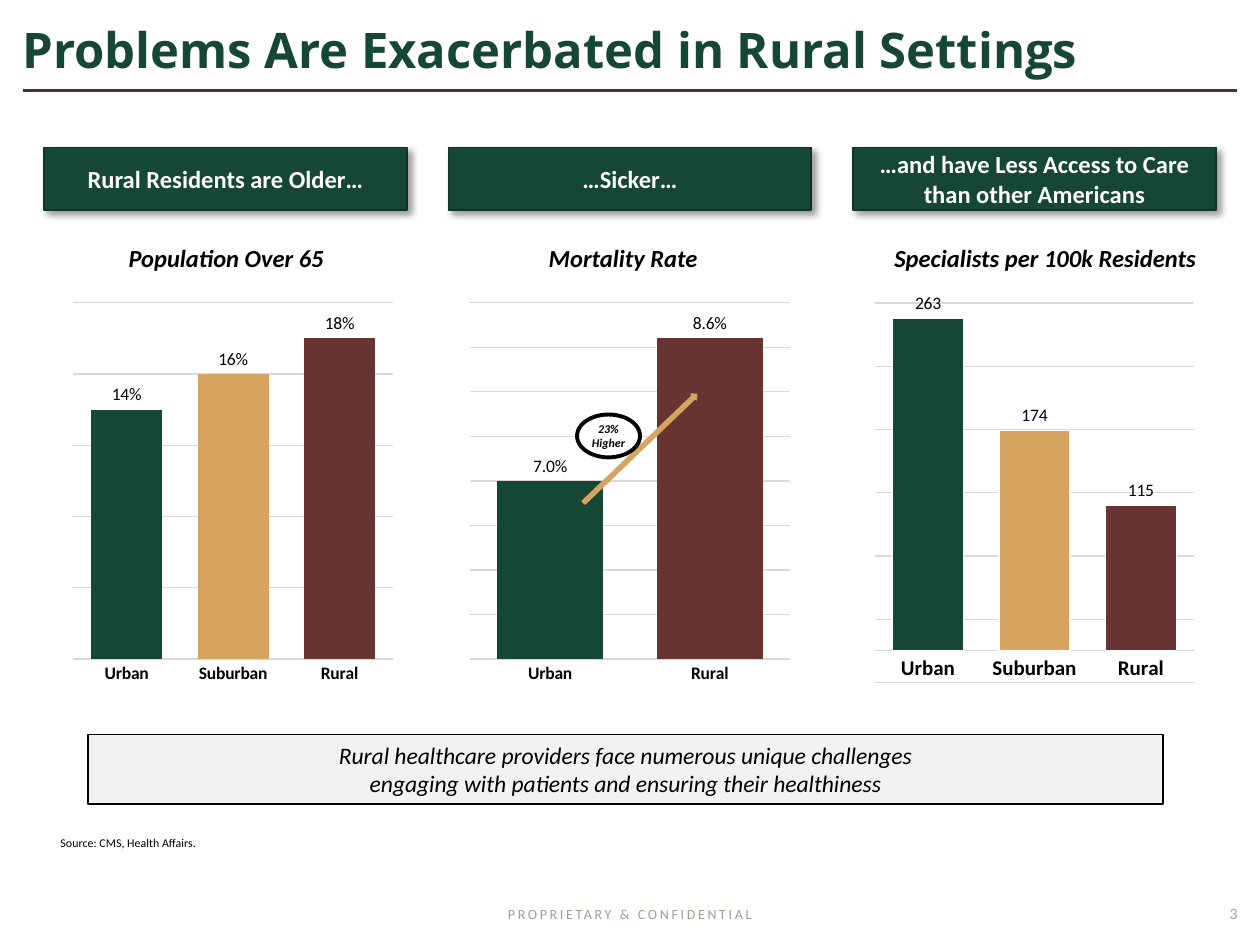
"""Build the slide comparing urban, suburban and rural health."""
from dataclasses import dataclass

from lxml import etree
from pptx import Presentation
from pptx import util as u
from pptx.chart.data import CategoryChartData
from pptx.dml.color import RGBColor
from pptx.enum import chart as charts
from pptx.enum import shapes, text
from pptx.oxml import parse_xml
from pptx.oxml.ns import nsdecls, qn

GREEN = RGBColor(0x15, 0x47, 0x34)
DARK_GREEN = RGBColor(0x10, 0x35, 0x26)
GOLD = RGBColor(0xD6, 0xA4, 0x61)
MAROON = RGBColor(0x68, 0x34, 0x31)
SLATE = RGBColor(0x45, 0x35, 0x36)
TAUPE = RGBColor(0xA5, 0x9C, 0x94)
GRID = RGBColor(0xD9, 0xD9, 0xD9)
PALE = RGBColor(0xF2, 0xF2, 0xF2)
BLACK = RGBColor(0, 0, 0)
WHITE = RGBColor(0xFF, 0xFF, 0xFF)
REGION_COLORS = {"Urban": GREEN, "Suburban": GOLD, "Rural": MAROON}

COLUMN_LEFT, COLUMN_PITCH = 0.35, 3.21
DEFAULT_INSETS = (0.1, 0.05, 0.1, 0.05)
HEADING_INSETS = (0, 0.05, 0.1, 0.05)


@dataclass(frozen=True)
class Box:
    left: float
    top: float
    width: float
    height: float

    def lengths(self) -> tuple:
        return tuple(u.Inches(n) for n in (self.left, self.top, self.width, self.height))


@dataclass(frozen=True)
class Column:
    banner: str
    heading: str
    heading_box: Box
    chart_box: Box
    values: dict[str, float]
    number_format: str
    banner_inset: float = 0.1
    label_size: float = 10
    minimum: float | None = None
    maximum: float | None = None
    major_unit: float | None = None
    overlap: int = 0
    outlined: bool = False


COLUMNS = (
    Column("Rural Residents are Older…", "Population Over 65",
           Box(0.7, 1.88, 2.29, 0.23), Box(0.53, 2.34, 2.64, 3.15),
           {"Urban": 0.14, "Suburban": 0.16, "Rural": 0.18}, "0%", major_unit=0.04),
    Column("…Sicker…", "Mortality Rate",
           Box(3.84, 1.88, 2.31, 0.23), Box(3.68, 2.34, 2.64, 3.15),
           {"Urban": 0.07, "Rural": 0.086}, "0.0%", minimum=0.05, overlap=-27),
    Column("…and have Less Access to Care than other Americans",
           "Specialists per 100k Residents",
           Box(7.04, 1.88, 2.61, 0.2), Box(6.89, 2.33, 2.64, 3.15),
           {"Urban": 263, "Suburban": 174, "Rural": 115}, "0", banner_inset=0.04,
           label_size=12, maximum=275, overlap=-27, outlined=True),
)


def write_text(shape, content: str, *, size: float, color: RGBColor = BLACK,
               font: str = "Calibri", bold: bool = False, italic: bool = False,
               align=text.PP_ALIGN.CENTER, anchor=text.MSO_ANCHOR.MIDDLE,
               insets: tuple = DEFAULT_INSETS, tracking: float = 0,
               line_spacing: float | None = None) -> None:
    frame = shape.text_frame
    frame.word_wrap = True
    frame.vertical_anchor = anchor
    (frame.margin_left, frame.margin_top,
     frame.margin_right, frame.margin_bottom) = (u.Inches(n) for n in insets)
    for index, line in enumerate(content.split("\n")):
        paragraph = frame.paragraphs[0] if index == 0 else frame.add_paragraph()
        paragraph.alignment = align
        paragraph.line_spacing = line_spacing
        run = paragraph.add_run()
        run.text = line
        run.font.name, run.font.size = font, u.Pt(size)
        run.font.bold, run.font.italic = bold, italic
        run.font.color.rgb = color
        if tracking:
            run._r.get_or_add_rPr().set("spc", str(int(tracking * 100)))


def add_label(slide, box: Box, content: str, **text_format) -> None:
    write_text(slide.shapes.add_textbox(*box.lengths()), content, **text_format)


def add_filled_shape(slide, kind, box: Box, fill: RGBColor, line: RGBColor, weight: float = 1):
    shape = slide.shapes.add_shape(kind, *box.lengths())
    shape.shadow.inherit = False
    shape.fill.solid()
    shape.fill.fore_color.rgb = fill
    shape.line.color.rgb = line
    shape.line.width = u.Pt(weight)
    return shape


def add_drop_shadow(shape) -> None:
    effects = shape._element.spPr.find(qn("a:effectLst"))
    effects.append(parse_xml(
        f'<a:outerShdw {nsdecls("a")} blurRad="{u.Pt(4)}" dist="{u.Pt(3)}" dir="2700000" '
        'algn="tl" rotWithShape="0"><a:srgbClr val="000000"><a:alpha val="40000"/>'
        '</a:srgbClr></a:outerShdw>'))


def style_font(font, size: float, bold: bool = False) -> None:
    font.name, font.size, font.bold = "Calibri", u.Pt(size), bold
    font.color.rgb = BLACK


def style_line(line, color: RGBColor) -> None:
    line.color.rgb = color
    line.width = u.Pt(0.75)


def add_column_chart(slide, column: Column) -> None:
    data = CategoryChartData(number_format=column.number_format)
    data.categories = list(column.values)
    data.add_series("Series 1", list(column.values.values()))
    chart = slide.shapes.add_chart(charts.XL_CHART_TYPE.COLUMN_CLUSTERED,
                                   *column.chart_box.lengths(), data).chart
    chart.has_title = chart.has_legend = False
    style_font(chart.font, 10)

    category_axis, value_axis = chart.category_axis, chart.value_axis
    for axis in (category_axis, value_axis):
        axis.major_tick_mark = axis.minor_tick_mark = charts.XL_TICK_MARK.NONE
    style_font(category_axis.tick_labels.font, column.label_size, bold=True)
    style_line(category_axis.format.line, GRID)
    value_axis.tick_label_position = charts.XL_TICK_LABEL_POSITION.NONE
    value_axis.format.line.fill.background()
    value_axis.has_major_gridlines = True
    style_line(value_axis.major_gridlines.format.line, GRID)
    value_axis.minimum_scale, value_axis.maximum_scale = column.minimum, column.maximum
    value_axis.major_unit = column.major_unit

    plot = chart.plots[0]
    plot.gap_width, plot.overlap = 50, column.overlap
    plot.vary_by_categories = False
    series = plot.series[0]
    series.format.fill.solid()
    series.format.fill.fore_color.rgb = GREEN
    for index, region in enumerate(column.values):
        point = series.points[index].format
        point.fill.solid()
        point.fill.fore_color.rgb = REGION_COLORS[region]
        if column.outlined:
            style_line(point.line, WHITE)
    labels = series.data_labels
    labels.show_value = True
    labels.position = charts.XL_LABEL_POSITION.OUTSIDE_END
    labels.number_format, labels.number_format_is_linked = column.number_format, False
    style_font(labels.font, 10)


def add_title_rule(slide) -> None:
    rule = slide.shapes.add_connector(shapes.MSO_CONNECTOR.STRAIGHT, u.Inches(0.18),
                                      u.Inches(0.72), u.Inches(9.82), u.Inches(0.72))
    rule.line.color.rgb = SLATE
    rule.line.width = u.Pt(1.5)
    etree.SubElement(rule._element.spPr, qn("a:effectLst"))


def main() -> None:
    presentation = Presentation()
    presentation.slide_width, presentation.slide_height = u.Inches(10), u.Inches(7.5)
    slide = presentation.slides.add_slide(presentation.slide_layouts[6])
    rectangle = shapes.MSO_SHAPE.RECTANGLE

    add_label(slide, Box(3.66, 7.14, 2.68, 0.24), "PROPRIETARY & CONFIDENTIAL", size=8,
              color=TAUPE, tracking=1.5, anchor=text.MSO_ANCHOR.TOP)
    add_title_rule(slide)
    add_label(slide, Box(9.13, 7.11, 0.79, 0.27), "3", size=9, color=TAUPE,
              align=text.PP_ALIGN.RIGHT)

    for index, column in enumerate(COLUMNS):
        box = Box(COLUMN_LEFT + index * COLUMN_PITCH, 1.17, 2.88, 0.5)
        banner = add_filled_shape(slide, rectangle, box, GREEN, DARK_GREEN)
        add_drop_shadow(banner)
        inset = column.banner_inset
        write_text(banner, column.banner, size=14, color=WHITE, bold=True,
                   insets=(inset, 0.05, inset, 0.05))
        add_label(slide, column.heading_box, column.heading, size=14, bold=True, italic=True,
                  anchor=text.MSO_ANCHOR.TOP, insets=HEADING_INSETS)
        add_column_chart(slide, column)

    message = add_filled_shape(slide, rectangle, Box(0.7, 5.83, 8.53, 0.55), PALE, BLACK)
    write_text(message, "Rural healthcare providers face numerous unique challenges\n"
               "engaging with patients and ensuring their healthiness", size=13.5, italic=True)
    add_label(slide, Box(0.48, 6.63, 3.48, 0.11), "Source: CMS, Health Affairs.", size=6.8,
              align=text.PP_ALIGN.LEFT, anchor=text.MSO_ANCHOR.TOP, insets=(0, 0, 0, 0))

    arrow = add_filled_shape(slide, shapes.MSO_SHAPE.RIGHT_ARROW,
                             Box(4.46, 3.53, 1.24, 0.06), GOLD, GOLD)
    arrow.rotation = 316.2
    callout = add_filled_shape(slide, shapes.MSO_SHAPE.OVAL, Box(4.58, 3.29, 0.5, 0.34),
                               WHITE, BLACK, weight=2.25)
    write_text(callout, "23%\nHigher", size=6.8, bold=True, italic=True,
               insets=(0, 0.05, 0, 0.05))
    add_label(slide, Box(0.08, 0.08, 9.84, 0.67), "Problems Are Exacerbated in Rural Settings",
              size=28, color=GREEN, font="Open Sans", bold=True,
              align=text.PP_ALIGN.LEFT, line_spacing=0.9)
    presentation.save("out.pptx")


if __name__ == "__main__":
    main()
